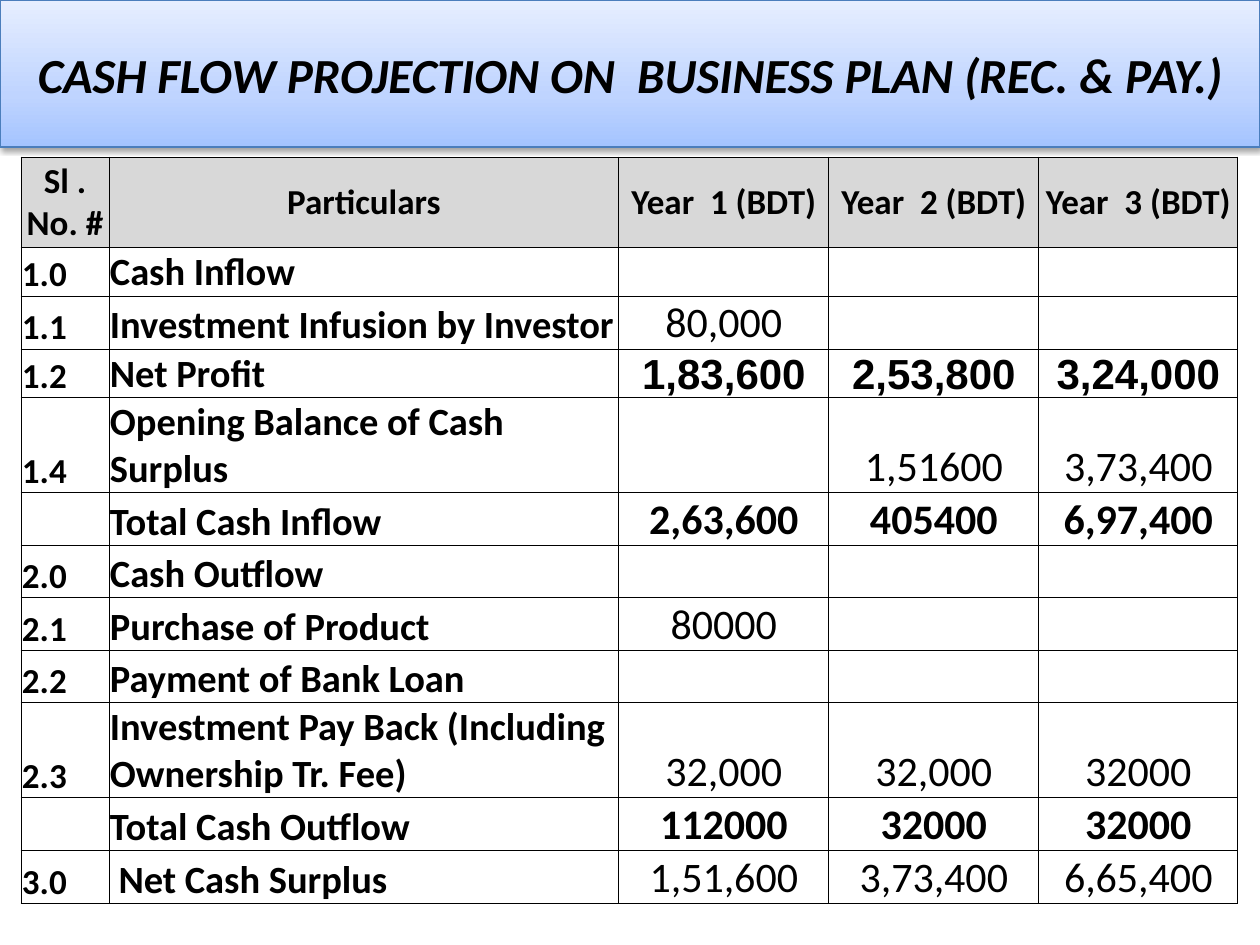
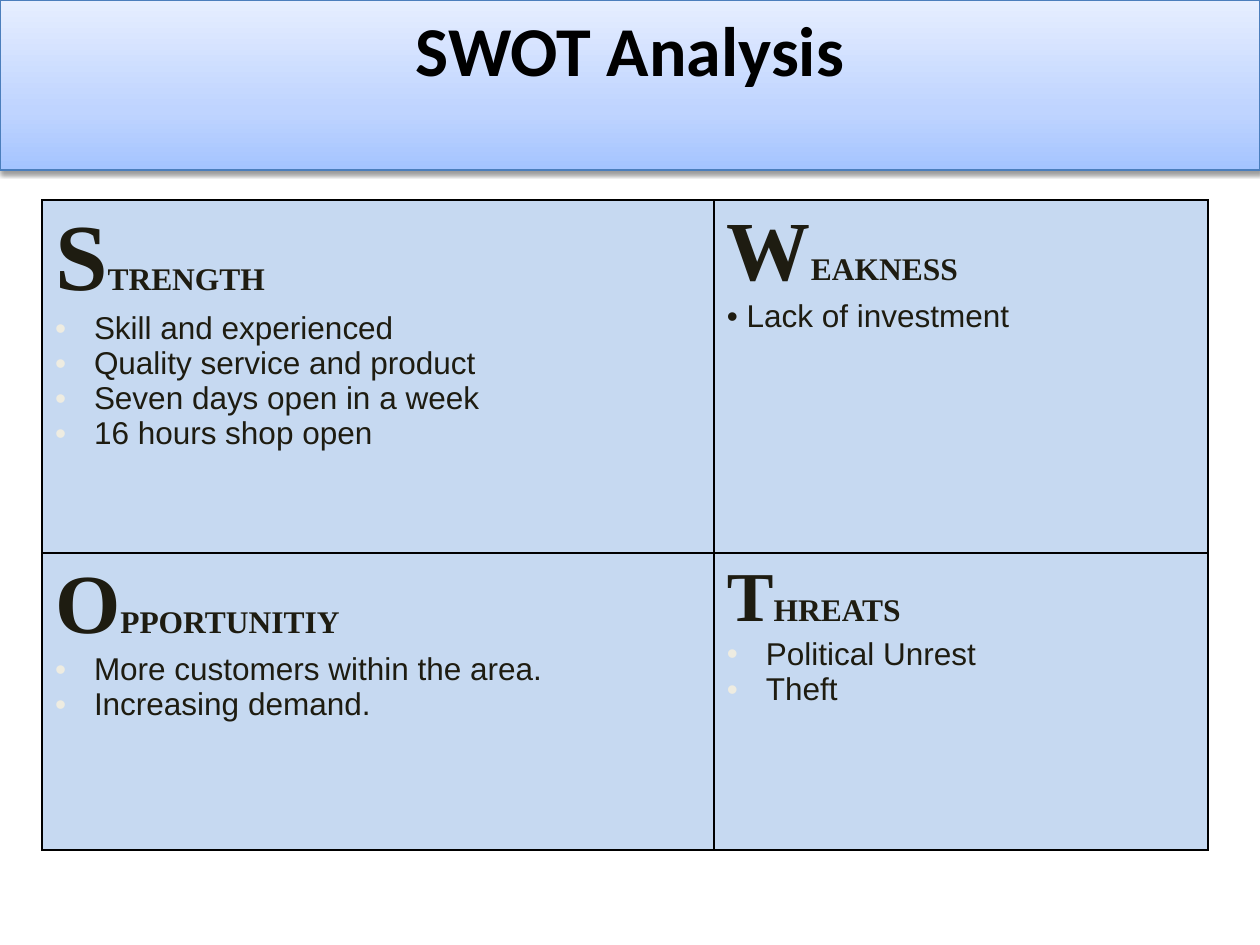
from lxml.etree import SubElement
from pptx import Presentation
from pptx.dml.color import RGBColor
from pptx.enum.text import MSO_ANCHOR as Anchor, MSO_AUTO_SIZE as AutoSize, PP_ALIGN as Align
from pptx.oxml import parse_xml
from pptx.oxml.ns import nsdecls, qn
from pptx.util import Emu, Pt

BLACK = RGBColor(0x00, 0x00, 0x00)
WHITE = RGBColor(0xFF, 0xFF, 0xFF)
HEADER_GREY = RGBColor(0xD8, 0xD8, 0xD8)
SWOT_BLUE = RGBColor(0xC6, 0xD9, 0xF1)
SWOT_INK = RGBColor(0x1E, 0x1C, 0x11)
BULLET_CREAM = RGBColor(0xEE, 0xEC, 0xE1)
BAND_LINE = RGBColor(0x4B, 0x7E, 0xBC)
BAND_STOPS = [(0, RGBColor(0xA4, 0xC4, 0xFF)), (35, RGBColor(0xBF, 0xD4, 0xFF)),
              (100, RGBColor(0xE6, 0xEE, 0xFF))]

PX_PER_INCH = 126
SLIDE_BOX = (0, 0, 1260, 945)
TITLE_ONLY = 5

CASH_COLUMNS = [88, 510, 210, 210, 199]
CASH_HEADER = ["Sl . No. #", "Particulars", "Year  1 (BDT)", "Year  2 (BDT)", "Year  3 (BDT)"]
CASH_HEADER_HEIGHT = 90
# height, serial number, particulars, yearly amounts, format of the amounts
CASH_ROWS = [
    (49, "1.0", "Cash Inflow", ["", "", ""], {}),
    (53, "1.1", "Investment Infusion by Investor", ["80,000", "", ""], {}),
    (49, "1.2", "Net Profit", ["1,83,600", "2,53,800", "3,24,000"],
     {"bold": True, "font": "Arial"}),
    (95, "1.4", "Opening Balance of Cash Surplus", ["", "1,51600", "3,73,400"], {}),
    (53, "", "Total Cash Inflow", ["2,63,600", "405400", "6,97,400"], {"bold": True}),
    (52, "2.0", "Cash Outflow", ["", "", ""], {}),
    (53, "2.1", "Purchase of Product", ["80000", "", ""], {}),
    (52, "2.2", "Payment of Bank Loan", ["", "", ""], {}),
    (95, "2.3", "Investment Pay Back (Including Ownership Tr. Fee)",
     ["32,000", "32,000", "32000"], {}),
    (53, "", "Total Cash Outflow", ["112000", "32000", "32000"], {"bold": True}),
    (53, "3.0", " Net Cash Surplus", ["1,51,600", "3,73,400", "6,65,400"], {}),
]

SWOT_COLUMNS = [672, 494]
SWOT_ROWS = [353, 297]
HANGING = {"indent": 39, "color": BULLET_CREAM}
# heading, size of its initial, points, bullet format
SWOT = [
    [("STRENGTH", 54, ["Skill and experienced", "Quality service and product",
                       "Seven days open in a week", "16 hours shop open"], HANGING),
     ("WEAKNESS", 48, [" Lack of investment"], {})],
    [("OPPORTUNITIY", 48, ["More customers within the area.", "Increasing demand."], HANGING),
     ("THREATS", 40, ["Political Unrest", "Theft"], HANGING)],
]


def px(length):
    return Emu(round(length * 914400 / PX_PER_INCH))


def write(paragraph, text, size=18, font="Calibri", color=BLACK, bold=False, italic=False,
          align=Align.LEFT):
    paragraph.alignment = align
    run = paragraph.add_run()
    run.text = text
    run.font.size = Pt(size)
    run.font.name = font
    run.font.color.rgb = color
    run.font.bold = bold
    run.font.italic = italic


def set_bullet(paragraph, indent=0, color=None):
    properties = paragraph._p.get_or_add_pPr()
    properties.set("marL", str(px(indent)))
    properties.set("indent", str(-px(indent)))
    if color is not None:
        bullet_color = SubElement(properties, qn("a:buClr"))
        SubElement(bullet_color, qn("a:srgbClr"), val=str(color))
    SubElement(properties, qn("a:buFont"), typeface="Arial")
    SubElement(properties, qn("a:buChar"), char="•")


def add_title_band(slide, box, text, anchor, **text_format):
    """Turn the title placeholder into the shaded band with a soft shadow."""
    band = slide.shapes.title
    band.left, band.top, band.width, band.height = map(px, box)
    stops = "".join(f'<a:gs pos="{position * 1000}"><a:srgbClr val="{color}"/></a:gs>'
                    for position, color in BAND_STOPS)
    properties = band._element.spPr
    properties.append(parse_xml(
        f'<a:gradFill {nsdecls("a")} rotWithShape="1"><a:gsLst>{stops}</a:gsLst>'
        '<a:lin ang="16200000" scaled="0"/></a:gradFill>'))
    band.line.color.rgb = BAND_LINE
    band.line.width = Pt(0.75)
    properties.append(parse_xml(
        f'<a:effectLst {nsdecls("a")}><a:outerShdw blurRad="{Pt(3.1)}" dist="{Pt(1.6)}" '
        'dir="5400000" rotWithShape="0"><a:srgbClr val="000000"><a:alpha val="38000"/>'
        '</a:srgbClr></a:outerShdw></a:effectLst>'))
    frame = band.text_frame
    frame.word_wrap = True
    frame.auto_size = AutoSize.NONE
    frame.vertical_anchor = anchor
    write(frame.paragraphs[0], text, bold=True, align=Align.CENTER, **text_format)


def add_grid(slide, left, top, columns, rows):
    frame = slide.shapes.add_table(len(rows), len(columns), px(left), px(top),
                                   px(sum(columns)), px(sum(rows)))
    table = frame.table
    table.first_row = table.horz_banding = False
    for column, width in zip(table.columns, columns):
        column.width = px(width)
    for row, height in zip(table.rows, rows):
        row.height = px(height)
    return table


def style_cell(cell, fill, border, anchor, margins):
    cell.vertical_anchor = anchor
    cell.margin_left, cell.margin_top, cell.margin_right, cell.margin_bottom = map(px, margins)
    properties = cell._tc.get_or_add_tcPr()
    for side in ("lnL", "lnR", "lnT", "lnB"):
        line = SubElement(properties, qn(f"a:{side}"), w=str(Pt(border)))
        SubElement(SubElement(line, qn("a:solidFill")), qn("a:srgbClr"), val=str(BLACK))
    cell.fill.solid()
    cell.fill.fore_color.rgb = fill


def add_cash_flow_table(slide, left, top):
    heights = [CASH_HEADER_HEIGHT] + [row[0] for row in CASH_ROWS]
    table = add_grid(slide, left, top, CASH_COLUMNS, heights)

    def fill_row(index, entries, fill, anchor):
        for column, (text, text_format) in enumerate(entries):
            cell = table.cell(index, column)
            style_cell(cell, fill, 0.5, anchor, (1, 1, 1, 0))
            if text:
                write(cell.text_frame.paragraphs[0], text, **text_format)

    heading = {"size": 20, "bold": True, "align": Align.CENTER}
    fill_row(0, [(text, heading) for text in CASH_HEADER], HEADER_GREY, Anchor.MIDDLE)
    for index, (_, serial, particulars, amounts, emphasis) in enumerate(CASH_ROWS, 1):
        amount_format = {"size": 24, "align": Align.CENTER, **emphasis}
        entries = [(serial, {"size": 20, "bold": True}),
                   (particulars, {"size": 22, "bold": True})]
        entries += [(amount, amount_format) for amount in amounts]
        fill_row(index, entries, WHITE, Anchor.BOTTOM)


def fill_swot_cell(cell, heading, initial_size, points, bullet):
    style_cell(cell, SWOT_BLUE, 1, Anchor.TOP, (13, 6, 13, 6))
    frame = cell.text_frame
    for text, size in ((heading[0], initial_size), (heading[1:], 18)):
        write(frame.paragraphs[0], text, size=size, font="Times New Roman",
              color=SWOT_INK, bold=True)
    for point in points:
        paragraph = frame.add_paragraph()
        write(paragraph, point, font="Arial", color=SWOT_INK)
        set_bullet(paragraph, **bullet)


def add_swot_table(slide, left, top):
    table = add_grid(slide, left, top, SWOT_COLUMNS, SWOT_ROWS)
    for row, quadrants in enumerate(SWOT):
        for column, quadrant in enumerate(quadrants):
            fill_swot_cell(table.cell(row, column), *quadrant)


def build_cash_flow(slide, box):
    left, top, width, _ = box
    add_title_band(slide, (left, top, width, 147),
                   "CASH FLOW PROJECTION ON  BUSINESS PLAN (REC. & PAY.)",
                   Anchor.MIDDLE, size=28, italic=True)
    add_cash_flow_table(slide, left + 21, top + 157)


def build_swot(slide, box):
    left, top, width, _ = box
    add_title_band(slide, (left, top, width, 170), "SWOT Analysis", Anchor.TOP, size=40)
    add_swot_table(slide, left + 42, top + 200)


def main():
    deck = Presentation()
    deck.slide_width, deck.slide_height = map(px, SLIDE_BOX[2:])
    for build in (build_cash_flow, build_swot):
        build(deck.slides.add_slide(deck.slide_layouts[TITLE_ONLY]), SLIDE_BOX)
    deck.save("out.pptx")


if __name__ == "__main__":
    main()
